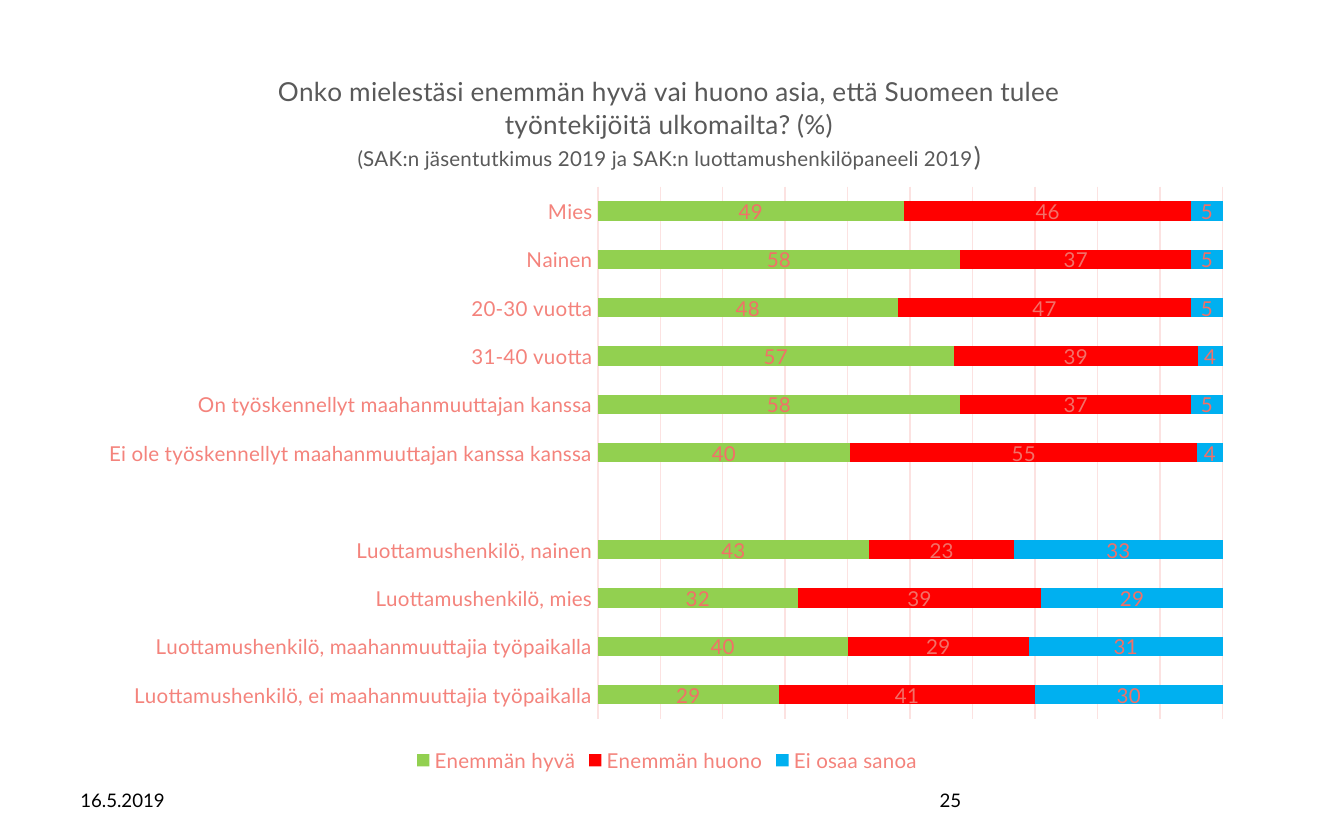
"""Build a slide with a stacked bar chart of survey answers on foreign workers."""
from typing import Any, NamedTuple

from lxml import etree
from pptx import Presentation
from pptx.chart.data import CategoryChartData
from pptx.dml.color import RGBColor
from pptx.enum.chart import XL_CHART_TYPE, XL_LABEL_POSITION, XL_LEGEND_POSITION, XL_TICK_MARK
from pptx.enum.text import MSO_ANCHOR, PP_ALIGN
from pptx.oxml.ns import qn
from pptx.util import Inches, Pt

STACKED = XL_CHART_TYPE.BAR_STACKED_100
CENTER = XL_LABEL_POSITION.CENTER
BOTTOM = XL_LEGEND_POSITION.BOTTOM
NO_TICK = XL_TICK_MARK.NONE
MIDDLE = MSO_ANCHOR.MIDDLE
LEFT, RIGHT = PP_ALIGN.LEFT, PP_ALIGN.RIGHT
FACE = "Lato"
PALE = "FCE2E1"
ROSE = "F4837C"
GRAY = "595959"


class Answer(NamedTuple):
    name: str
    color: str
    values: tuple


class Footer(NamedTuple):
    text: str
    left: float
    align: Any


class Run(NamedTuple):
    text: str
    size: int


GROUPS = (
    "Mies", "Nainen", "20-30 vuotta", "31-40 vuotta",
    "On työskennellyt maahanmuuttajan kanssa",
    "Ei ole työskennellyt maahanmuuttajan kanssa kanssa",
    "",
    "Luottamushenkilö, nainen", "Luottamushenkilö, mies",
    "Luottamushenkilö, maahanmuuttajia työpaikalla",
    "Luottamushenkilö, ei maahanmuuttajia työpaikalla",
)
ANSWERS = (
    Answer("Enemmän hyvä", "92D050", (49, 58, 48, 57, 58, 40, None, 43, 32, 40, 29)),
    Answer("Enemmän huono", "FF0000", (46, 37, 47, 39, 37, 55, None, 23, 39, 29, 41)),
    Answer("Ei osaa sanoa", "00B0F0", (5, 5, 5, 4, 5, 4, None, 33, 29, 31, 30)),
)
TITLE = (
    (Run("Onko mielestäsi enemmän hyvä vai huono asia, että Suomeen tulee "
         "työntekijöitä ulkomailta? (%)", 14),),
    (Run("(SAK:n jäsentutkimus 2019 ja SAK:n luottamushenkilöpaneeli 2019", 11), Run(")", 14)),
)
FOOTERS = (Footer("16.5.2019", 0.5, LEFT), Footer("25", 6.31, RIGHT))


def rgb(code: str) -> RGBColor:
    return RGBColor.from_string(code)


def apply(item: Any, **form: Any) -> None:
    for key, value in form.items():
        setattr(item, key, value)


def style(font: Any, size: int, color: str) -> None:
    apply(font, name=FACE, size=Pt(size), bold=False)
    font.color.rgb = rgb(color)


def rule(line: Any) -> None:
    line.color.rgb = rgb(PALE)
    line.width = Pt(0.75)


def place(owner: Any, index: int, **marks: Any) -> None:
    """Give a chart part a manual layout as fractions of the chart."""
    for old in owner.findall(qn("c:layout")):
        owner.remove(old)
    layout = etree.Element(qn("c:layout"))
    manual = etree.SubElement(layout, qn("c:manualLayout"))
    for tag, value in marks.items():
        etree.SubElement(manual, qn(f"c:{tag}")).set("val", str(value))
    owner.insert(index, layout)


def add_title(chart: Any) -> None:
    title = chart.chart_title
    frame = title.text_frame
    for index, runs in enumerate(TITLE):
        para = frame.add_paragraph() if index else frame.paragraphs[0]
        style(para.font, 14, GRAY)
        for part in runs:
            run = para.add_run()
            run.text = part.text
            style(run.font, part.size, GRAY)
    place(title._element, 1, xMode="edge", yMode="edge", x=0.16, y=0.04)


def add_chart(slide: Any) -> None:
    data = CategoryChartData()
    data.categories = GROUPS
    for answer in ANSWERS:
        data.add_series(answer.name, answer.values)
    box = map(Inches, (0.66, 0.29, 8.61, 5.5))
    chart = slide.shapes.add_chart(STACKED, *box, data).chart
    style(chart.font, 10, "EE4035")
    add_title(chart)

    plot = chart.plots[0]
    apply(plot, gap_width=150, overlap=100, vary_by_categories=False)
    for series, answer in zip(plot.series, ANSWERS):
        series.format.fill.solid()
        series.format.fill.fore_color.rgb = rgb(answer.color)
        labels = series.data_labels
        apply(labels, show_value=True, position=CENTER)
        style(labels.font, 11, "F27068")

    groups, scale = chart.category_axis, chart.value_axis
    apply(groups, reverse_order=True, major_tick_mark=NO_TICK, minor_tick_mark=NO_TICK,
          has_major_gridlines=False)
    style(groups.tick_labels.font, 11, ROSE)
    rule(groups.format.line)
    apply(scale, visible=False, has_major_gridlines=True, minimum_scale=0,
          maximum_scale=1, major_unit=0.1)
    rule(scale.major_gridlines.format.line)

    chart.has_legend = True
    apply(chart.legend, position=BOTTOM, include_in_layout=False)
    style(chart.legend.font, 11, ROSE)
    place(chart._chartSpace.chart.plotArea, 0, layoutTarget="inner", xMode="edge",
          yMode="edge", x=0.44, y=0.2, w=0.54, h=0.72)


def add_footer(slide: Any, note: Footer) -> None:
    box = map(Inches, (note.left, 5.79, 0.94, 0.33))
    frame = slide.shapes.add_textbox(*box).text_frame
    apply(frame, word_wrap=True, vertical_anchor=MIDDLE)
    para = frame.paragraphs[0]
    apply(para, text=note.text, alignment=note.align)
    style(para.font, 10, "000000")


def main() -> None:
    deck = Presentation()
    apply(deck, slide_width=Inches(10), slide_height=Inches(6.25))
    slide = deck.slides.add_slide(deck.slide_layouts[6])
    for note in FOOTERS:
        add_footer(slide, note)
    add_chart(slide)
    deck.save("out.pptx")


if __name__ == "__main__":
    main()
